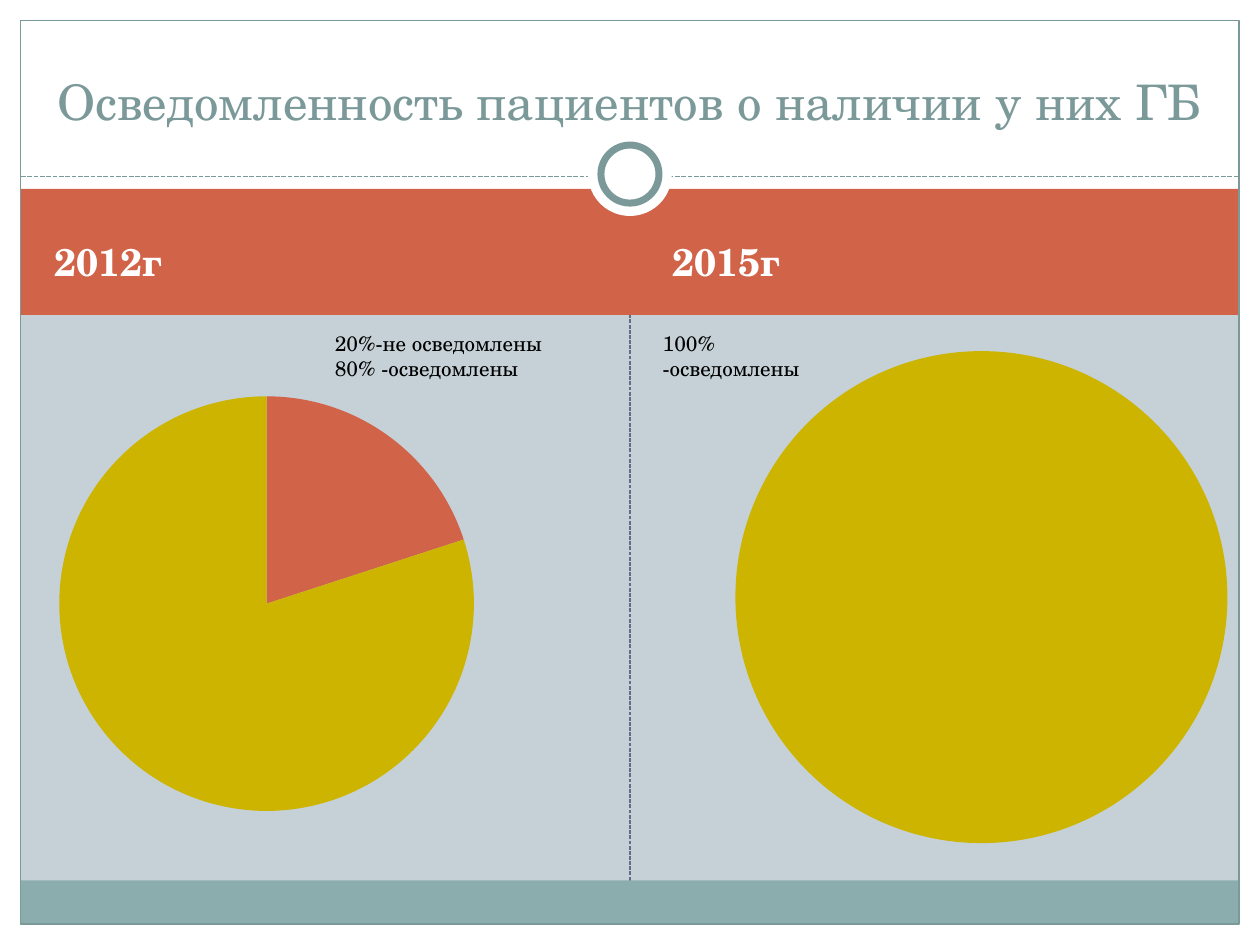
from lxml import etree
from pptx import Presentation
from pptx.chart.data import CategoryChartData
from pptx.dml.color import RGBColor
from pptx.enum.chart import XL_CHART_TYPE as ChartType
from pptx.enum.dml import MSO_LINE as Dash
from pptx.enum.shapes import MSO_CONNECTOR as Connector, MSO_SHAPE as Shape
from pptx.enum.text import MSO_ANCHOR as Anchor, PP_ALIGN as Align
from pptx.oxml import parse_xml
from pptx.oxml.ns import nsdecls, qn
from pptx.util import Cm, Pt

FONT = "TeX Gyre Schola"
COLORS = {
    "background": "C5D1D7",
    "white": "FFFFFF",
    "black": "000000",
    "orange": "D16349",
    "yellow": "CCB400",
    "teal": "8CADAE",
    "frame": "7C999A",
    "divider": "646B86",
}
WIDTH, HEIGHT = 25.4, 19.05
MARGIN = 0.42
INNER_WIDTH = WIDTH - 2 * MARGIN
MIDDLE = WIDTH / 2
RING_CENTER = 3.51
FOOTER_TOP = 17.75


def rgb(name):
    return RGBColor.from_string(COLORS[name])


class SlideBuilder:
    """Holds the slide and draws elements on it, with lengths in centimetres."""

    def __init__(self, slide):
        self.slide = slide
        fill = slide.background.fill
        fill.solid()
        fill.fore_color.rgb = rgb("background")

    def shape(self, kind, left, top, width, height, fill=None, line=None, weight=0.75):
        shape = self.slide.shapes.add_shape(
            kind, Cm(left), Cm(top), Cm(width), Cm(height))
        shape.shadow.inherit = False
        if fill:
            shape.fill.solid()
            shape.fill.fore_color.rgb = rgb(fill)
        else:
            shape.fill.background()
        if line:
            shape.line.color.rgb = rgb(line)
            shape.line.width = Pt(weight)
        else:
            shape.line.fill.background()

    def circle(self, diameter, **style):
        """Draws a circle around the centre of the title ornament."""
        radius = diameter / 2
        self.shape(Shape.OVAL, MIDDLE - radius, RING_CENTER - radius,
                   diameter, diameter, **style)

    def dashed_line(self, start, end, color, weight):
        connector = self.slide.shapes.add_connector(
            Connector.STRAIGHT, *(Cm(length) for length in (*start, *end)))
        connector.line.color.rgb = rgb(color)
        connector.line.width = Pt(weight)
        connector.line.dash_style = Dash.SQUARE_DOT
        etree.SubElement(connector._element.spPr, qn("a:effectLst"))

    def text(self, lines, left, top, width, height, size, color,
             bold=False, align=Align.LEFT, anchor=Anchor.TOP):
        box = self.slide.shapes.add_textbox(Cm(left), Cm(top), Cm(width), Cm(height))
        frame = box.text_frame
        frame.word_wrap = True
        frame.vertical_anchor = anchor
        frame.text = "\n".join(lines)
        for paragraph in frame.paragraphs:
            paragraph.alignment = align
            font = paragraph.font
            font.name, font.size, font.bold = FONT, Pt(size), bold
            font.color.rgb = rgb(color)

    def pie(self, values, left, top, width, height, diameter):
        data = CategoryChartData()
        data.categories = ["1", "2"]
        data.add_series("Series 1", values)
        chart = self.slide.shapes.add_chart(
            ChartType.PIE, Cm(left), Cm(top), Cm(width), Cm(height), data).chart
        chart.has_legend = chart.has_title = False
        chart.font.name, chart.font.size = FONT, Pt(18)
        chart.font.color.rgb = rgb("black")
        plot = chart.plots[0]
        plot.vary_by_categories = True
        for index, color in enumerate(("orange", "yellow")):
            point_format = plot.series[0].points[index].format
            point_format.fill.solid()
            point_format.fill.fore_color.rgb = rgb(color)
            point_format.line.fill.background()
        self.center_plot(chart, diameter / width, diameter / height)

    @staticmethod
    def center_plot(chart, width_share, height_share):
        """Fixes the plot area in the middle of the chart at the given shares."""
        settings = {
            "layoutTarget": "inner", "xMode": "edge", "yMode": "edge",
            "x": round((1 - width_share) / 2, 4), "y": round((1 - height_share) / 2, 4),
            "w": round(width_share, 4), "h": round(height_share, 4),
        }
        items = "".join(f'<c:{key} val="{value}"/>' for key, value in settings.items())
        layout = parse_xml(f'<c:layout {nsdecls("c")}>'
                           f"<c:manualLayout>{items}</c:manualLayout></c:layout>")
        plot_area = chart._chartSpace.chart.plotArea
        for old_layout in plot_area.findall(qn("c:layout")):
            plot_area.remove(old_layout)
        plot_area.insert(0, layout)


def draw_frame(builder):
    builder.dashed_line((MIDDLE, FOOTER_TOP), (MIDDLE, 6.12), "divider", 0.75)
    bands = [
        (0, 0, WIDTH, 4.01, "white"),
        (0, HEIGHT - MARGIN, WIDTH, MARGIN, "white"),
        (0, 0, MARGIN, HEIGHT, "white"),
        (WIDTH - MARGIN, 0, MARGIN, HEIGHT, "white"),
        (MARGIN, 3.81, INNER_WIDTH, 2.54, "orange"),
        (MARGIN, FOOTER_TOP, INNER_WIDTH, HEIGHT - MARGIN - FOOTER_TOP, "teal"),
    ]
    for *place, color in bands:
        builder.shape(Shape.RECTANGLE, *place, fill=color)
    builder.dashed_line((MARGIN, 3.56), (WIDTH - MARGIN, 3.56), "frame", 0.9)
    builder.shape(Shape.RECTANGLE, MARGIN, MARGIN, INNER_WIDTH, HEIGHT - 2 * MARGIN,
                  line="frame")
    builder.circle(1.69, fill="white")
    builder.circle(1.17, fill="white", line="frame", weight=4)


def main():
    presentation = Presentation()
    presentation.slide_width, presentation.slide_height = Cm(WIDTH), Cm(HEIGHT)
    blank = presentation.slide_layouts[6]
    builder = SlideBuilder(presentation.slides.add_slide(blank))
    draw_frame(builder)

    for year, left in (("2012г", 0.84), ("2015г", 13.31)):
        builder.text([year], left, 4.24, 11.23, 2.03, 22, "white",
                     bold=True, anchor=Anchor.MIDDLE)
    builder.pie((20, 80), 0.84, 6.86, 9.07, 10.62, diameter=8.36)
    builder.pie((None, 100), 14.17, 6.73, 11.23, 10.62, diameter=9.92)
    builder.text(["Осведомленность пациентов о наличии у них ГБ"],
                 0.84, 0.64, 23.7, 2.11, 28, "frame",
                 align=Align.CENTER, anchor=Anchor.BOTTOM)
    builder.text(["20%-не осведомлены", "80% -осведомлены"],
                 6.5, 6.53, 5.79, 1.27, 12, "black")
    builder.text(["100% -осведомлены"], 13.11, 6.53, 4.19, 1.27, 12, "black")
    presentation.save("out.pptx")


if __name__ == "__main__":
    main()
